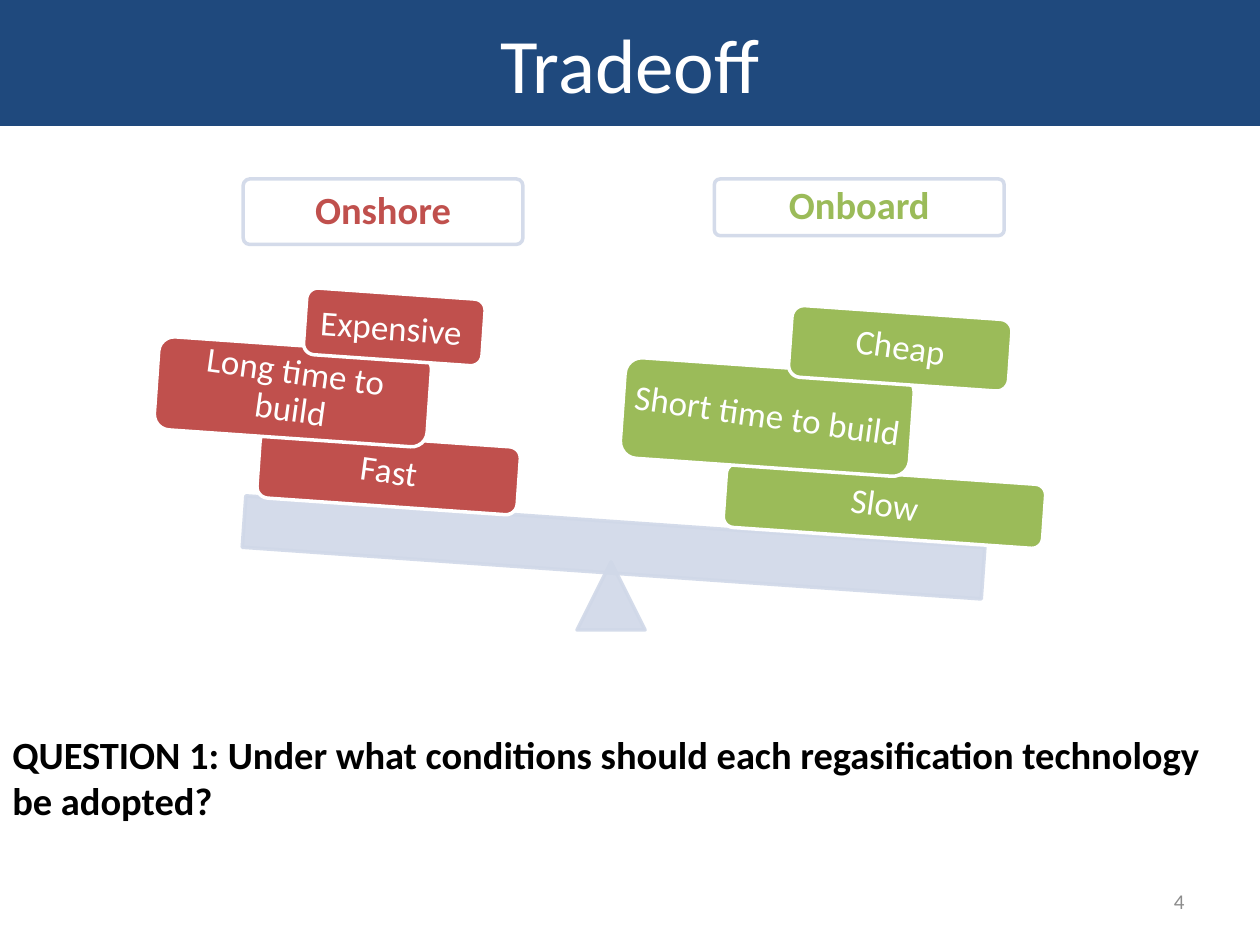
import pptx
import pptx.util
import pptx.oxml
import pptx.oxml.ns
import pptx.dml.color
import pptx.enum.shapes
import pptx.enum.text

RGB = pptx.dml.color.RGBColor
KIND = pptx.enum.shapes.MSO_SHAPE
ALIGN = pptx.enum.text.PP_ALIGN
ANCHOR = pptx.enum.text.MSO_ANCHOR

NAVY = RGB(0x1F, 0x49, 0x7D)
RED = RGB(0xC0, 0x50, 0x4D)
GREEN = RGB(0x9B, 0xBB, 0x59)
PALE = RGB(0xD0, 0xD8, 0xE8)
GRAY = RGB(0x8C, 0x8C, 0x8C)
WHITE = RGB(0xFF, 0xFF, 0xFF)
BLACK = RGB(0, 0, 0)

TILT = 4  # degrees by which the scale leans


class Deck:
    """Slide and style; lengths are grid units of a tenth of an inch."""
    font = "Calibri"
    unit = pptx.util.Inches(0.1)

    def __init__(self, cols, rows):
        self.show = pptx.Presentation()
        self.show.slide_width = cols * self.unit
        self.show.slide_height = rows * self.unit
        self.slide = self.show.slides.add_slide(self.show.slide_layouts[6])

    def place(self, box):
        return [round(n * self.unit) for n in box]

    def fade(self, shape, share):
        """Make the fill and line colours partly see-through."""
        for color in shape.element.spPr.iter(pptx.oxml.ns.qn("a:srgbClr")):
            color.append(pptx.oxml.parse_xml(
                f'<a:alpha {pptx.oxml.ns.nsdecls("a")} val="{share * 1000}"/>'))

    def shape(self, kind, box, fill, line=None, turn=0, share=100, curve=None):
        shape = self.slide.shapes.add_shape(kind, *self.place(box))
        shape.shadow.inherit = False
        shape.rotation = turn
        if curve is not None:
            shape.adjustments[0] = curve
        shape.fill.solid()
        shape.fill.fore_color.rgb = fill
        if line is None:
            shape.line.fill.background()
        else:
            shape.line.width = pptx.util.Pt(2)
            shape.line.color.rgb = line
        if share < 100:
            self.fade(shape, share)
        return shape

    def letter(self, shape, text, size, color, align=ALIGN.CENTER, bold=False,
               inset=None, space=None, anchor=ANCHOR.MIDDLE):
        frame = shape.text_frame
        frame.word_wrap = True
        frame.vertical_anchor = anchor
        if inset is not None:
            frame.margin_left = frame.margin_right = round(inset * self.unit)
            frame.margin_top = frame.margin_bottom = round(inset * self.unit)
        para = frame.paragraphs[0]
        para.text = text
        para.alignment = align
        para.line_spacing = space
        para.font.name = self.font
        para.font.size = pptx.util.Pt(size)
        para.font.bold = bold
        para.font.color.rgb = color

    def text(self, box, text, size, color, turn=0, **style):
        shape = self.slide.shapes.add_textbox(*self.place(box))
        shape.rotation = turn
        self.letter(shape, text, size, color, **style)

    def label(self, box, text, color):
        shape = self.shape(KIND.ROUNDED_RECTANGLE, box, WHITE, PALE,
                           share=90, curve=0.1)
        self.letter(shape, text, 22, color, bold=True, inset=0.9, space=0.9)

    def block(self, box, text, color):
        """A weight on the scale, its text leaning twice as far."""
        self.shape(KIND.ROUNDED_RECTANGLE, box, color, WHITE, TILT)
        self.text(box, text, 20, WHITE, 2 * TILT, inset=0.8, space=0.9)


def main():
    deck = Deck(100, 75)

    # Title band
    band = deck.shape(KIND.RECTANGLE, (0, 0, 100, 10), NAVY)
    deck.letter(band, "Tradeoff", 44, WHITE)

    # Slide number
    deck.text((71.7, 69.5, 23.3, 4), "4", 12, GRAY, align=ALIGN.RIGHT)

    # Names of the two sides
    deck.label((19.3, 14.2, 22.2, 5.2), "Onshore", RED)
    deck.label((56.7, 14.2, 23, 4.5), "Onboard", GREEN)

    # Pivot and beam
    deck.shape(KIND.ISOSCELES_TRIANGLE, (45.8, 44.6, 5.4, 5.4), PALE, PALE,
               share=90)
    deck.shape(KIND.RECTANGLE, (19.3, 41.4, 58.8, 4.1), PALE, PALE, TILT, 90)

    # Weights, from the beam upwards
    for box, text, color in (
            ((57.5, 37.6, 25.4, 5.1), "Slow", GREEN),
            ((49.4, 29.1, 23, 8), "Short time to build", GREEN),
            ((62.7, 24.8, 17.5, 5.7), "Cheap", GREEN),
            ((20.5, 34.8, 20.7, 5.4), "Fast", RED),
            ((12.4, 27.4, 21.7, 7.4), "Long time to build", RED)):
        deck.block(box, text, color)
    top = deck.shape(KIND.ROUNDED_RECTANGLE, (24.2, 23.3, 14.2, 5.3), RED,
                     WHITE, TILT)
    deck.letter(top, "Expensive", 20, WHITE, align=ALIGN.LEFT)

    # Question
    deck.text((0, 57.5, 100, 8.4),
              "QUESTION 1: Under what conditions should each regasification "
              "technology be adopted?", 22, BLACK, align=ALIGN.LEFT,
              bold=True, anchor=ANCHOR.TOP)

    deck.show.save("out.pptx")


if __name__ == "__main__":
    main()
